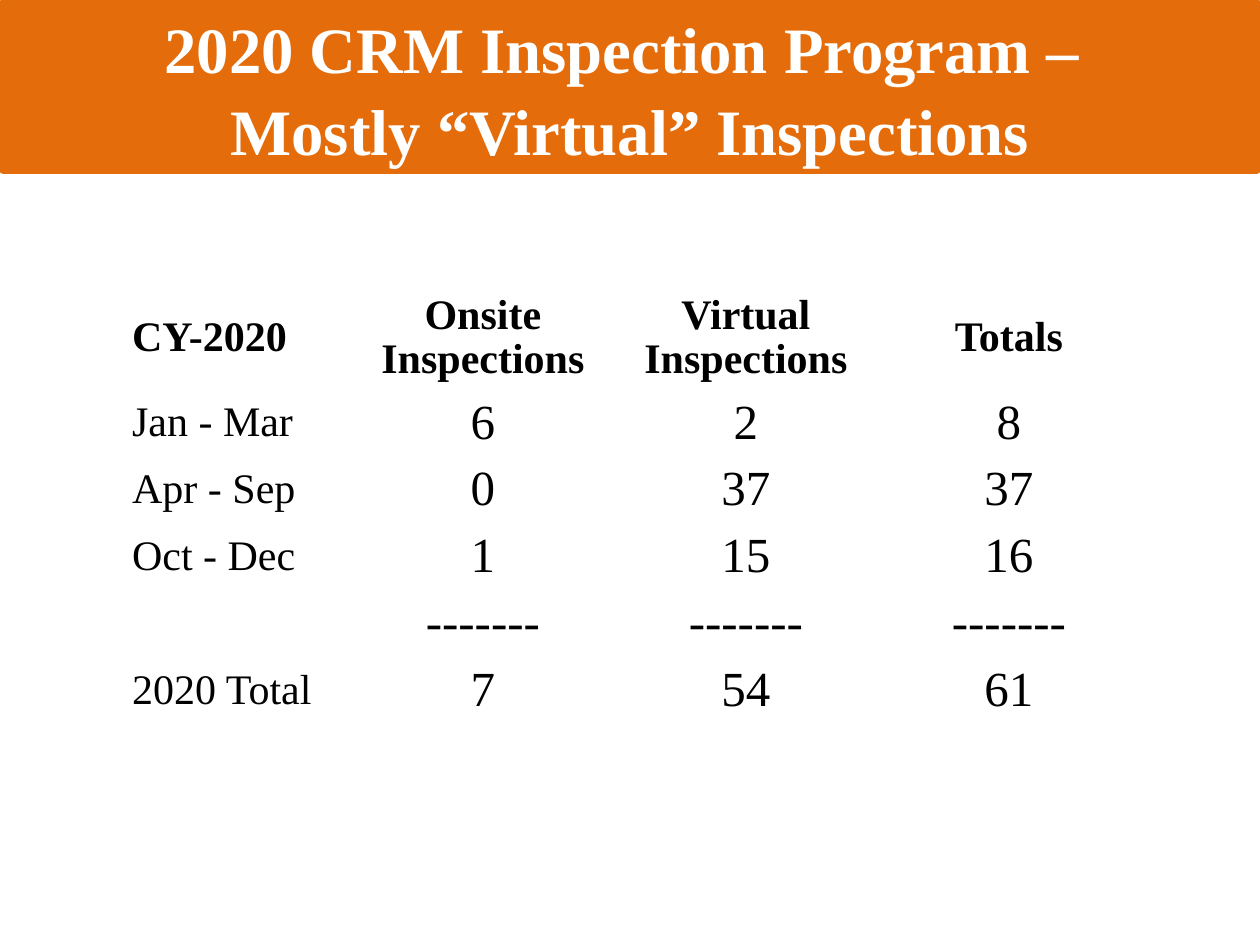
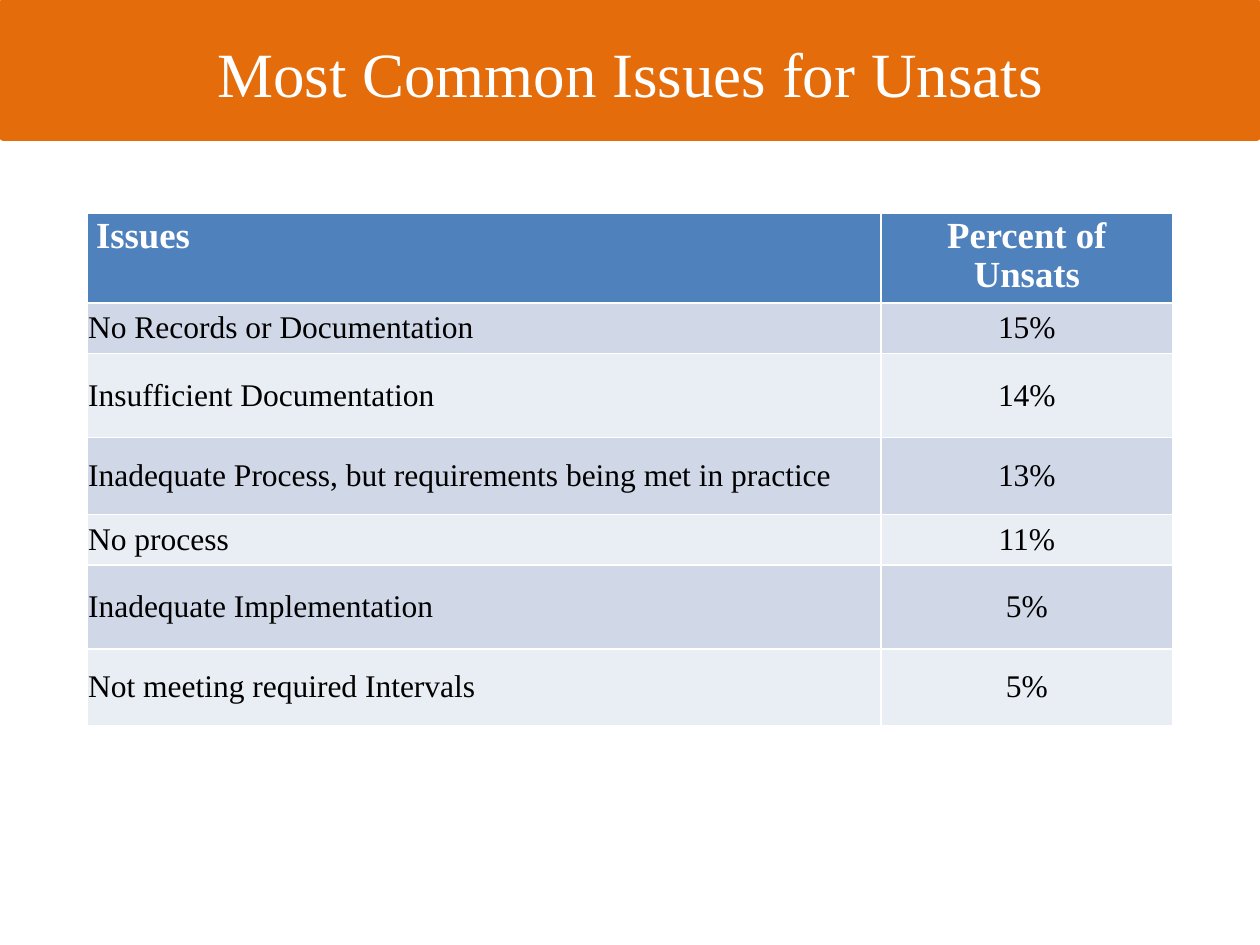
from pptx import Presentation
from pptx.dml.color import RGBColor
from pptx.enum.text import MSO_ANCHOR, MSO_AUTO_SIZE, PP_ALIGN
from pptx.util import Pt

TOP, MIDDLE = MSO_ANCHOR.TOP, MSO_ANCHOR.MIDDLE
LEFT, CENTER = PP_ALIGN.LEFT, PP_ALIGN.CENTER
NO_AUTOFIT = MSO_AUTO_SIZE.NONE

ORANGE = RGBColor(0xE4, 0x6C, 0x0A)
BLUE = RGBColor(0x4F, 0x81, 0xBD)
BAND_DARK = RGBColor(0xD0, 0xD8, 0xE8)
BAND_LIGHT = RGBColor(0xE9, 0xED, 0xF4)
WHITE = RGBColor(0xFF, 0xFF, 0xFF)
BLACK = RGBColor(0, 0, 0)
FONT = "Times New Roman"
TITLE_ONLY = 5


def format_text(frame, align, spacing, size, color, bold):
    font_format = {"name": FONT, "size": Pt(size), "bold": bold}
    for para in frame.paragraphs:
        para.alignment = align
        para.line_spacing = spacing
        for span in para.runs:
            for name, value in font_format.items():
                setattr(span.font, name, value)
            span.font.color.rgb = color


def add_titled_table(title, title_height, title_size, title_bold, rows, left, top, widths, heights):
    page = deck.slides.add_slide(deck.slide_layouts[TITLE_ONLY])
    band = page.shapes.title
    band_format = {"left": Pt(2.4), "top": Pt(3), "width": Pt(715.2), "height": Pt(title_height)}
    for name, value in band_format.items():
        setattr(band, name, value)
    band.fill.solid()
    band.fill.fore_color.rgb = ORANGE
    band.line.color.rgb = ORANGE
    band.line.width = Pt(6.75)
    frame = band.text_frame
    frame.text = title
    frame.auto_size = NO_AUTOFIT
    frame.vertical_anchor = MIDDLE
    format_text(frame, CENTER, 1.05, title_size, WHITE, title_bold)

    table = page.shapes.add_table(
        len(rows), len(widths), Pt(left), Pt(top), Pt(sum(widths)), Pt(sum(heights))
    ).table
    for column, width in zip(table.columns, widths):
        column.width = Pt(width)
    for row, height, values in zip(table.rows, heights, rows):
        row.height = Pt(height)
        for cell, value in zip(row.cells, values):
            cell.text = value
    return table


deck = Presentation()
deck.slide_width, deck.slide_height = Pt(720), Pt(540)

inspections = [
    ("CY-2020", "Onsite Inspections", "Virtual Inspections", "Totals"),
    ("Jan - Mar", "6", "2", "8"),
    ("Apr - Sep", "0", "37", "37"),
    ("Oct - Dec", "1", "15", "16"),
    ("", "-------", "-------", "-------"),
    ("2020 Total", "7", "54", "61"),
]
table = add_titled_table(
    "2020 CRM Inspection Program – \nMostly “Virtual” Inspections", 93, 37, True,
    inspections, 69, 164, [131.8] + [150.3] * 3, [59] + [38.2] * 5,
)
for row_index, row in enumerate(table.rows):
    for column_index, cell in enumerate(row.cells):
        is_header, is_label = row_index == 0, column_index == 0
        cell.fill.background()
        cell.vertical_anchor = MIDDLE
        cell.margin_left = cell.margin_right = Pt(6.5)
        cell.margin_top = cell.margin_bottom = Pt(3)
        size = 24 if is_header or is_label else 28
        format_text(cell.text_frame, LEFT if is_label else CENTER, 0.95, size, BLACK, is_header)

issues = [
    ("Issues", "Percent of Unsats"),
    ("No Records or Documentation", "15%"),
    ("Insufficient Documentation", "14%"),
    ("Inadequate Process, but requirements being met in practice", "13%"),
    ("No process", "11%"),
    ("Inadequate Implementation", "5%"),
    ("Not meeting required Intervals", "5%"),
]
table = add_titled_table(
    "Most Common Issues for Unsats", 74, 36, False,
    issues, 49.7, 121.7, [453.6, 167], [51.6] + [28.8, 48, 43.9] * 2,
)
for row_index, row in enumerate(table.rows):
    is_header = row_index == 0
    fill_color = BLUE if is_header else (BAND_DARK if row_index % 2 else BAND_LIGHT)
    side, above, below = (5.2, 2.9, 2.9) if is_header else (0.7, 0.7, 0)
    for column_index, cell in enumerate(row.cells):
        cell.fill.solid()
        cell.fill.fore_color.rgb = fill_color
        cell_format = {
            "vertical_anchor": TOP if is_header else MIDDLE,
            "margin_left": Pt(side), "margin_right": Pt(side),
            "margin_top": Pt(above), "margin_bottom": Pt(below),
        }
        for name, value in cell_format.items():
            setattr(cell, name, value)
        format_text(
            cell.text_frame, CENTER if column_index else LEFT, 0.95,
            21 if is_header else 18, WHITE if is_header else BLACK, is_header,
        )

deck.save("out.pptx")
